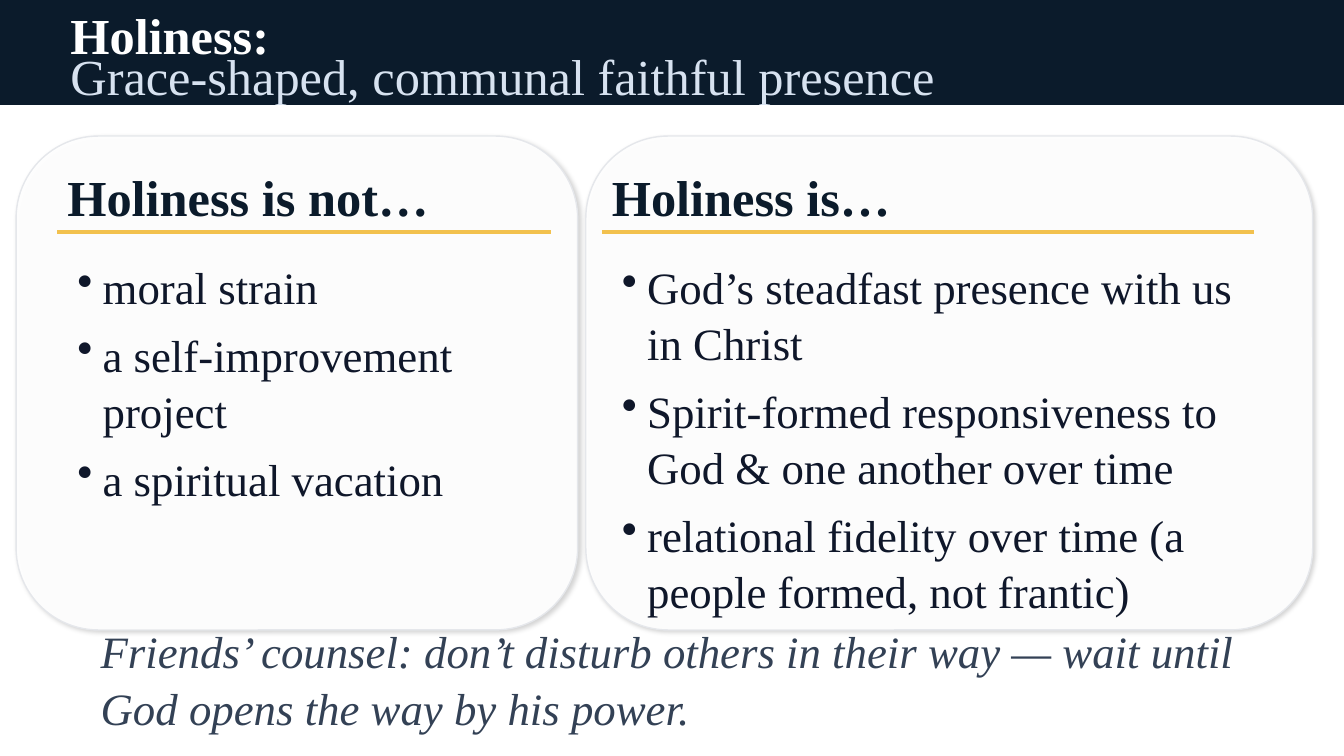
import pptx
import pptx.dml.color
import pptx.enum.shapes
import pptx.enum.text
import pptx.oxml
import pptx.oxml.ns
import pptx.util
from pptx.util import Inches

RGBColor = pptx.dml.color.RGBColor
NAVY = RGBColor(0x0B, 0x1B, 0x2B)
PALE_BLUE = RGBColor(0xD7, 0xE2, 0xF0)
WHITE = RGBColor(0xFF, 0xFF, 0xFF)
CARD_EDGE = RGBColor(0xE5, 0xE7, 0xEB)
GOLD = RGBColor(0xF2, 0xC1, 0x4E)
INK = RGBColor(0x0F, 0x17, 0x2A)
SLATE = RGBColor(0x33, 0x41, 0x55)
FONT = "Times New Roman"
WIDTH, HEIGHT, BANNER_HEIGHT = 13.33, 7.5, 1.05
SHAPES = pptx.enum.shapes.MSO_SHAPE
ANCHOR = pptx.enum.text.MSO_ANCHOR


def add_xml(parent, tag, content="", **attributes):
    """Append a DrawingML element to parent."""
    listed = "".join(f' {name}="{value}"' for name, value in attributes.items())
    namespace = pptx.oxml.ns.nsdecls("a")
    parent.append(pptx.oxml.parse_xml(
        f"<a:{tag} {namespace}{listed}>{content}</a:{tag}>"))


def add_panel(page, kind, box, fill, edge):
    panel = page.shapes.add_shape(kind, *map(Inches, box))
    panel.shadow.inherit = False
    panel.fill.solid()
    panel.fill.fore_color.rgb = fill
    panel.line.color.rgb = edge
    panel.line.width = pptx.util.Pt(1)
    return panel


def add_text(page, box, lines, size, color, bold=False, italic=False,
             bullets=False, line_spacing=None):
    frame = page.shapes.add_textbox(*map(Inches, box)).text_frame
    frame.word_wrap = True
    frame.vertical_anchor = ANCHOR.TOP if bullets else ANCHOR.MIDDLE
    frame.text = "\n".join(lines)
    for para in frame.paragraphs:
        if line_spacing:
            para.line_spacing = line_spacing
        if bullets:
            para.space_after = pptx.util.Pt(8)
            properties = para._p.get_or_add_pPr()
            properties.set("marL", str(Inches(0.25)))
            properties.set("indent", str(Inches(-0.25)))
            add_xml(properties, "buChar", char="•")
        for span in para.runs:
            span.font.name = FONT
            span.font.size = pptx.util.Pt(size)
            span.font.color.rgb = color
            span.font.bold = bold
            span.font.italic = italic


def add_banner(page, box):
    left, top, width, height = box
    add_panel(page, SHAPES.RECTANGLE, box, NAVY, NAVY)
    text_left, text_width = left + 0.6, 12.2
    add_text(page, (text_left, top + 0.12, text_width, 0.45),
             ["Holiness:"], 36, WHITE, bold=True)
    add_text(page, (text_left, top + 0.64, text_width, 0.22),
             ["Grace-shaped, communal faithful presence"], 36, PALE_BLUE)


def add_card(page, box, heading, points, inset, heading_width, rule_width, list_width):
    left, top, width, height = box
    card = add_panel(page, SHAPES.ROUNDED_RECTANGLE, box, WHITE, CARD_EDGE)

    # Translucent fill and soft shadow
    add_xml(card.fill._xPr.find(pptx.oxml.ns.qn("a:solidFill"))[0], "alpha", val=94000)
    effects = card._element.spPr.find(pptx.oxml.ns.qn("a:effectLst"))
    add_xml(effects, "outerShdw",
            '<a:srgbClr val="000000"><a:alpha val="18000"/></a:srgbClr>',
            blurRad=pptx.util.Pt(3), dist=pptx.util.Pt(2), dir=45 * 60000,
            algn="tl", rotWithShape=0)

    # Heading above a gold rule
    text_left = left + inset
    add_text(page, (text_left, top + 0.35, heading_width, 0.5),
             [heading], 36, NAVY, bold=True)
    rule_top = Inches(top + 0.95)
    rule = page.shapes.add_connector(
        pptx.enum.shapes.MSO_CONNECTOR.STRAIGHT, Inches(text_left), rule_top,
        Inches(text_left + rule_width), rule_top)
    rule.line.color.rgb = GOLD
    rule.line.width = pptx.util.Pt(3)
    add_xml(rule._element.spPr, "effectLst")

    # Bulleted points
    add_text(page, (text_left + 0.1, top + 1.15, list_width, height - 1.45),
             points, 32, INK, bullets=True, line_spacing=1.05)


def add_counsel(page, box):
    add_text(page, box,
             ["Friends’ counsel: don’t disturb others in their way — wait until "
              "God opens the way by his power."],
             32, SLATE, italic=True, line_spacing=1.05)


def main():
    deck = pptx.Presentation()
    deck.slide_width, deck.slide_height = Inches(WIDTH), Inches(HEIGHT)
    page = deck.slides.add_slide(deck.slide_layouts[6])

    add_banner(page, (0, 0, WIDTH, BANNER_HEIGHT))
    add_panel(page, SHAPES.RECTANGLE,
              (0, BANNER_HEIGHT, WIDTH, HEIGHT - BANNER_HEIGHT), WHITE, WHITE)
    add_card(page, (0.16, 1.35, 5.57, 4.9), "Holiness is not…",
             ["moral strain", "a self-improvement project", "a spiritual vacation"],
             inset=0.41, heading_width=4.9, rule_width=4.9, list_width=4.7)
    add_card(page, (5.81, 1.35, 7.21, 4.9), "Holiness is…",
             ["God’s steadfast presence with us in Christ",
              "Spirit-formed responsiveness to God & one another over time",
              "relational fidelity over time (a people formed, not frantic)"],
             inset=0.16, heading_width=5.78, rule_width=6.47, list_width=6.67)
    add_counsel(page, (0.9, 6.45, 12, 0.55))

    deck.save("out.pptx")


if __name__ == "__main__":
    main()
